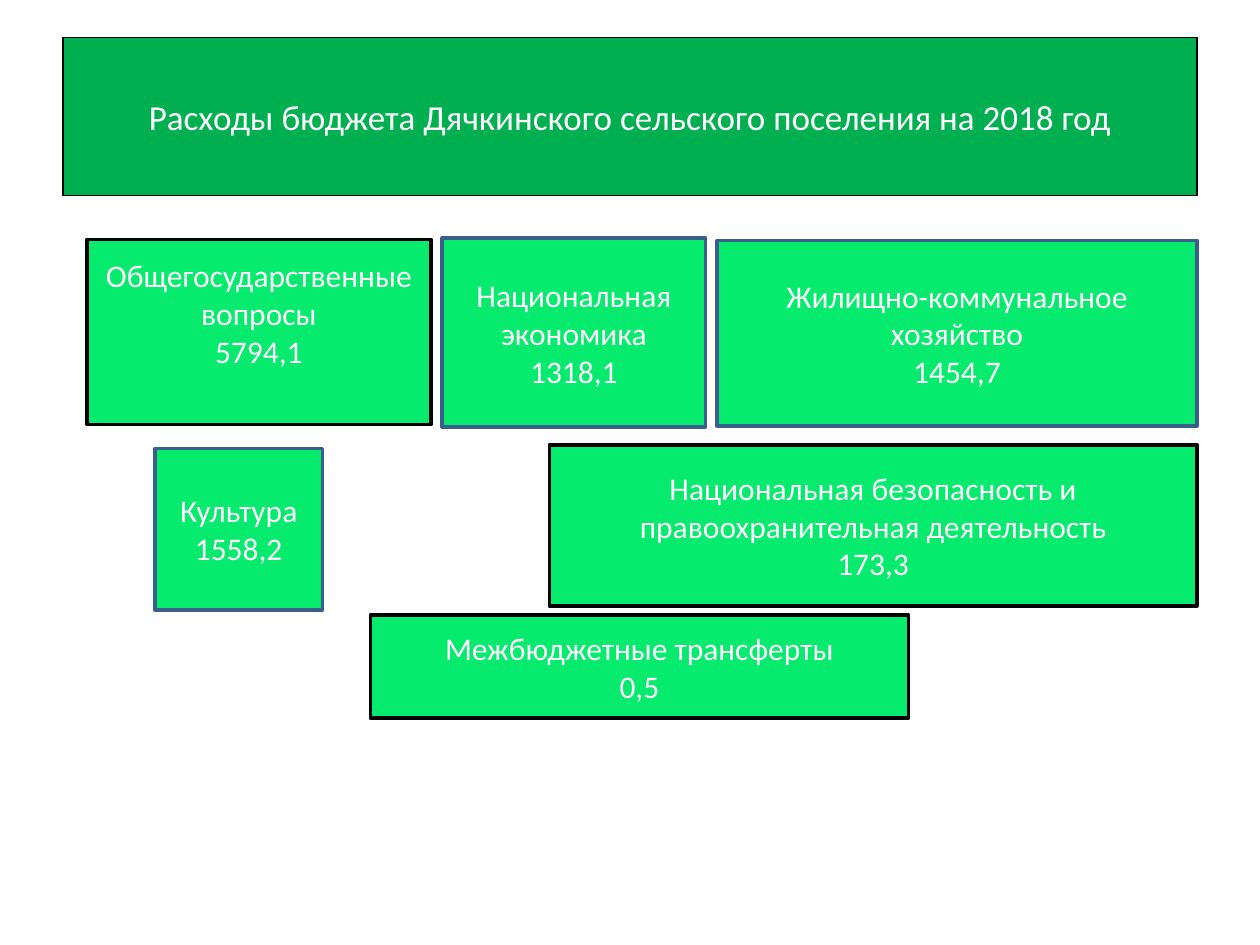
import pptx
import pptx.util
import pptx.dml.color
import pptx.enum.shapes
import pptx.enum.text

Inches = pptx.util.Inches
Pt = pptx.util.Pt
RGBColor = pptx.dml.color.RGBColor

TITLE_GREEN = RGBColor(0x00, 0xB0, 0x50)
BOX_GREEN = RGBColor(0x06, 0xEA, 0x6D)
BLACK = RGBColor(0x00, 0x00, 0x00)
BLUE = RGBColor(0x3A, 0x5F, 0x8C)
WHITE = RGBColor(0xFF, 0xFF, 0xFF)

prs = pptx.Presentation()
prs.slide_width = Inches(10)
prs.slide_height = Inches(7.5)
s = prs.slides.add_slide(prs.slide_layouts[6])


def add_box(at, lines, fill, line, width, size):
    sp = s.shapes.add_shape(
        pptx.enum.shapes.MSO_SHAPE.RECTANGLE, *[Inches(v) for v in at])
    sp.shadow.inherit = False
    sp.fill.solid()
    sp.fill.fore_color.rgb = fill
    sp.line.color.rgb = line
    sp.line.width = Pt(width)
    tf = sp.text_frame
    tf.word_wrap = True
    tf.vertical_anchor = pptx.enum.text.MSO_ANCHOR.MIDDLE
    for i, text in enumerate(lines):
        p = tf.add_paragraph() if i else tf.paragraphs[0]
        p.alignment = pptx.enum.text.PP_ALIGN.CENTER
        r = p.add_run()
        r.text = text
        r.font.name = "Calibri"
        r.font.size = Pt(size)
        r.font.color.rgb = WHITE
    return sp


title = "Расходы бюджета Дячкинского сельского поселения на 2018 год"
add_box((0.5, 0.3, 9, 1.25), [title], TITLE_GREEN, BLACK, 0.75, 20)

expenses = [
    ("Общегосударственные вопросы", "5794,1", BLACK, (0.69, 1.9, 2.73, 1.47), 0.35),
    ("Национальная безопасность и правоохранительная деятельность", "173,3",
     BLACK, (4.36, 3.53, 5.14, 1.28), 0.05),
    ("Национальная экономика", "1318,1", BLUE, (3.51, 1.89, 2.09, 1.5), 0.05),
    ("Жилищно-коммунальное хозяйство", "1454,7", BLUE, (5.69, 1.91, 3.81, 1.47), 0.05),
    ("Культура", "1558,2", BLUE, (1.23, 3.56, 1.33, 1.28), 0.05),
    ("Межбюджетные трансферты", "0,5", BLACK, (2.94, 4.88, 4.27, 0.82), 0.05),
]
for name, amount, line, at, bottom in expenses:
    sp = add_box(at, [name, amount], BOX_GREEN, line, 2, 18)
    sp.text_frame.margin_bottom = Inches(bottom)

prs.save("out.pptx")
